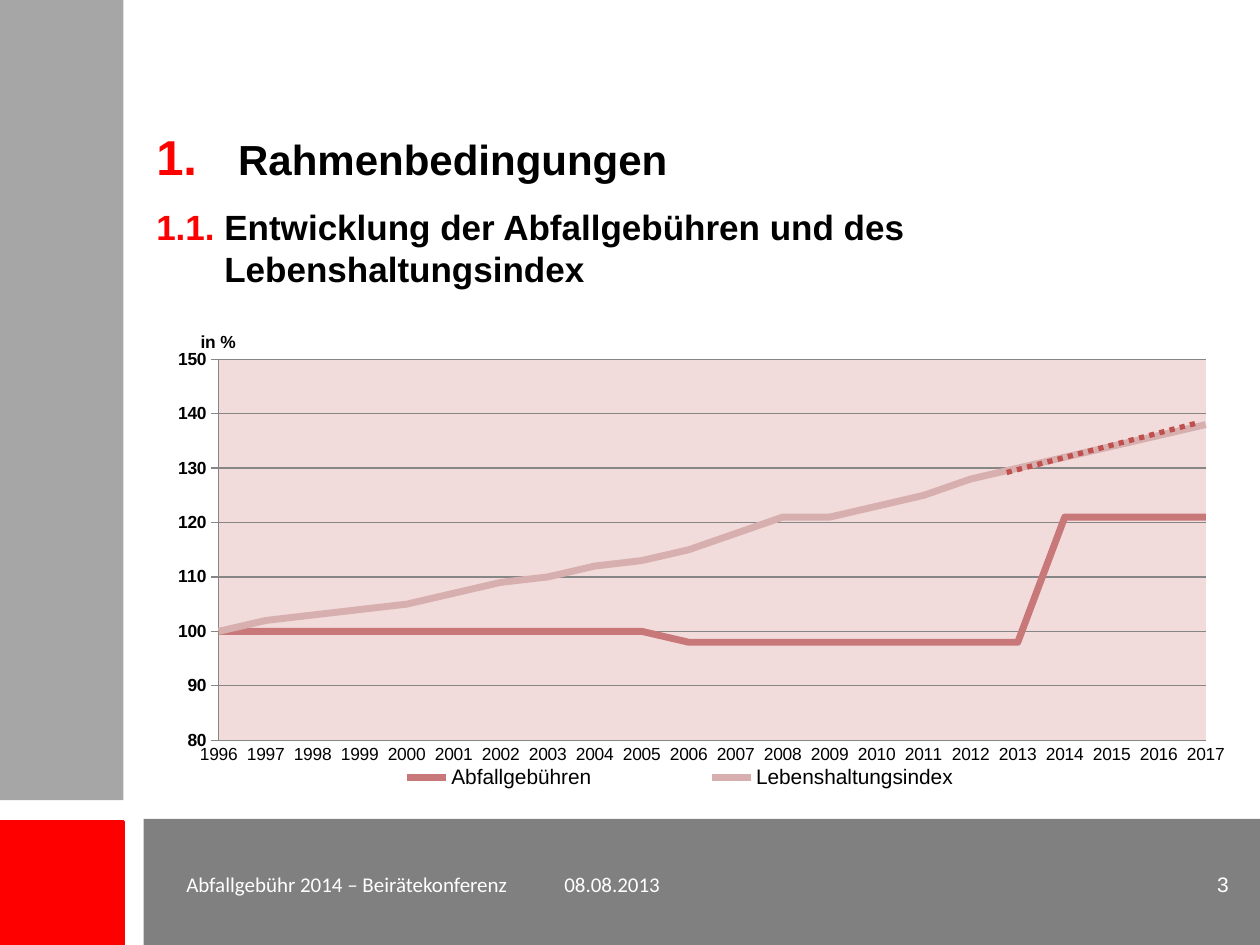
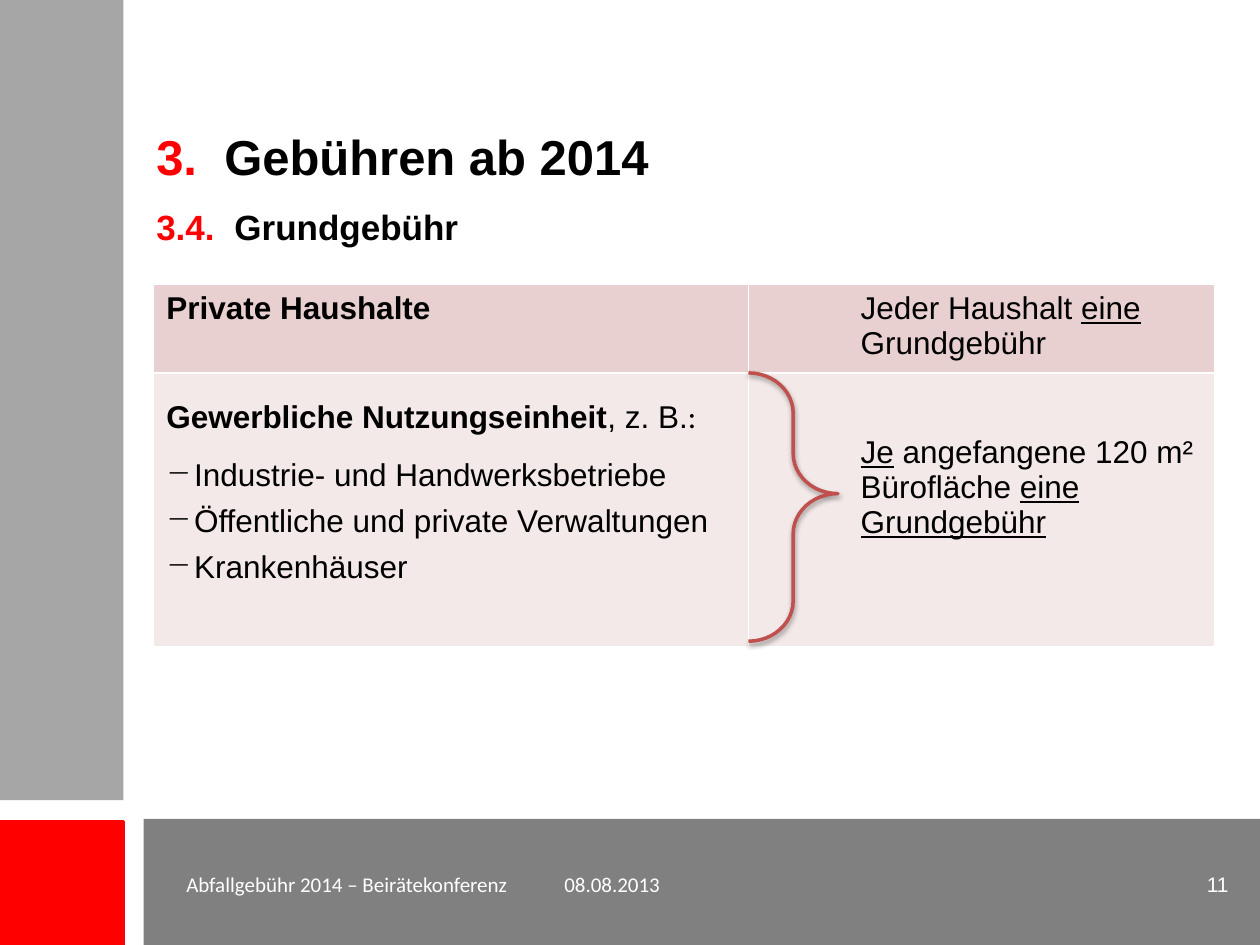
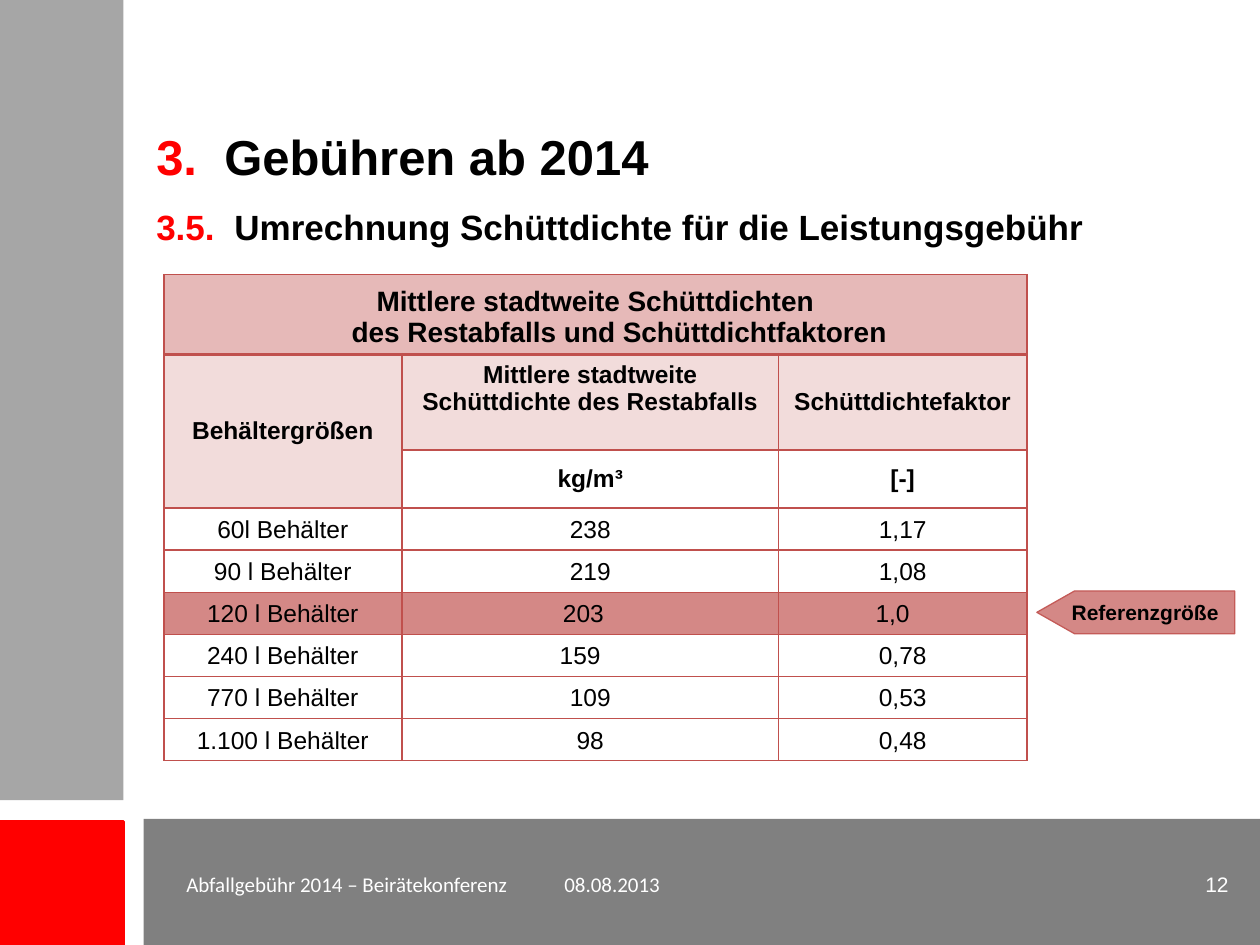
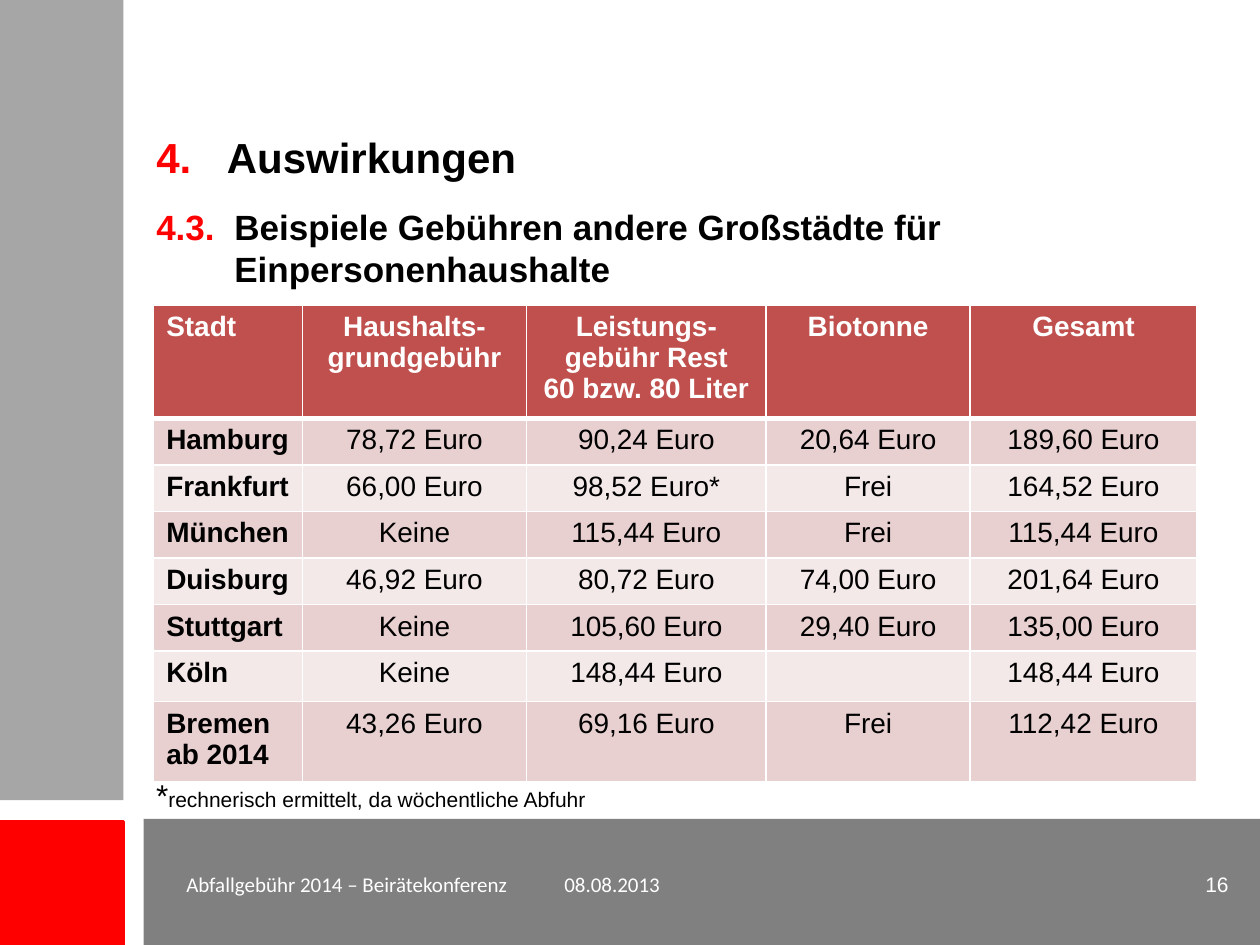
from dataclasses import dataclass
from typing import NamedTuple, Optional

from lxml import etree
from pptx import Presentation
from pptx.chart.data import CategoryChartData
from pptx.dml.color import RGBColor
from pptx.enum.chart import XL_CHART_TYPE, XL_LEGEND_POSITION, XL_MARKER_STYLE, XL_TICK_MARK
from pptx.enum.dml import MSO_LINE
from pptx.enum.shapes import MSO_CONNECTOR, MSO_SHAPE
from pptx.enum.text import MSO_ANCHOR, MSO_AUTO_SIZE, PP_ALIGN
from pptx.oxml.ns import qn
from pptx.util import Inches, Pt

LEFT, CENTER, RIGHT = PP_ALIGN.LEFT, PP_ALIGN.CENTER, PP_ALIGN.RIGHT
TOP, MIDDLE, BOTTOM = MSO_ANCHOR.TOP, MSO_ANCHOR.MIDDLE, MSO_ANCHOR.BOTTOM
RECTANGLE = MSO_SHAPE.RECTANGLE

BLACK, WHITE, RED = "000000", "FFFFFF", "FF0000"
FOOTER_GREY, SIDE_GREY, GRID_GREY = "808080", "A6A6A6", "868686"
ACCENT, ACCENT_EDGE, HIGHLIGHT = "C0504D", "C45B58", "D48886"
HEADING_PINK, PALE_PINK = "E6B9B8", "F2DCDB"
BAND_DARK, BAND_LIGHT = "E8D0D0", "F4E9E9"
FEE_LINE, INDEX_LINE = "C87878", "D8AFAF"


class Box(NamedTuple):
    left: float
    top: float
    width: float
    height: float

    def lengths(self) -> list:
        return [Inches(value) for value in self]


class Run(NamedTuple):
    text: str
    size: float = 18
    color: str = BLACK
    bold: bool = False
    underline: bool = False
    font: str = "Arial"


@dataclass
class Line:
    runs: list
    align: PP_ALIGN = LEFT
    indent: float = 0
    first: float = 0
    after: float = 0
    spacing: float = 1
    bullet: str = ""
    tab: float = 0


@dataclass
class Band:
    box: Box
    fill: str
    line: Optional[str] = None


@dataclass
class Heading:
    number: str
    lines: list
    box: Box
    indent: float
    number_size: float
    text_size: float


BANDS = [
    Band(Box(0, 6.52, 0.98, 0.98), RED, RED),
    Band(Box(1.14, 6.5, 8.86, 1), FOOTER_GREY),
    Band(Box(0, 0, 0.98, 6.35), SIDE_GREY),
]


def rgb(value: str) -> RGBColor:
    return RGBColor.from_string(value)


def add_element(parent, tag: str, **attributes):
    return etree.SubElement(parent, qn(tag), attributes)


def add_color(parent, color: str):
    return add_element(add_element(parent, "a:solidFill"), "a:srgbClr", val=color)


def write(text_frame, lines: list, anchor: MSO_ANCHOR = TOP) -> None:
    text_frame.word_wrap = True
    text_frame.vertical_anchor = anchor
    for position, line in enumerate(lines):
        paragraph = text_frame.paragraphs[0] if position == 0 else text_frame.add_paragraph()
        properties = paragraph._p.get_or_add_pPr()
        properties.set("marL", str(Inches(line.indent)))
        properties.set("indent", str(Inches(line.first)))
        if line.bullet:
            add_element(properties, "a:buChar", char=line.bullet)
        else:
            add_element(properties, "a:buNone")
        if line.tab:
            tabs = add_element(properties, "a:tabLst")
            add_element(tabs, "a:tab", pos=str(Inches(line.tab)), algn="l")
        paragraph.alignment = line.align
        paragraph.space_before = Pt(0)
        paragraph.space_after = Pt(line.after)
        paragraph.line_spacing = line.spacing
        for piece in line.runs:
            for part_number, part in enumerate(piece.text.split("\n")):
                if part_number:
                    paragraph.add_line_break()
                run = paragraph.add_run()
                run.text = part
                font = run.font
                font.name, font.size = piece.font, Pt(piece.size)
                font.bold, font.underline = piece.bold, piece.underline
                font.color.rgb = rgb(piece.color)


def add_text(slide, box: Box, lines: list, anchor: MSO_ANCHOR = TOP) -> None:
    write(slide.shapes.add_textbox(*box.lengths()).text_frame, lines, anchor)


def add_shape(slide, kind: MSO_SHAPE, box: Box, fill: Optional[str],
              line: Optional[str] = None, width: float = 2):
    shape = slide.shapes.add_shape(kind, *box.lengths())
    shape.shadow.inherit = False
    if fill:
        shape.fill.solid()
        shape.fill.fore_color.rgb = rgb(fill)
    else:
        shape.fill.background()
    if line:
        shape.line.color.rgb = rgb(line)
        shape.line.width = Pt(width)
    else:
        shape.line.fill.background()
    return shape


def move_bands_to_master(presentation, slide) -> None:
    tree = presentation.slide_master.shapes.element
    for position, band in enumerate(BANDS):
        shape = add_shape(slide, RECTANGLE, band.box, band.fill, band.line)
        tree.insert(2 + position, shape.element)


def fill_heading(placeholder, heading: Heading) -> None:
    box = heading.box.lengths()
    placeholder.left, placeholder.top, placeholder.width, placeholder.height = box
    placeholder.text_frame.auto_size = MSO_AUTO_SIZE.NONE
    lines = []
    for position, text in enumerate(heading.lines):
        runs = [Run(text, heading.text_size, BLACK, True)]
        if position == 0:
            runs.insert(0, Run(heading.number + "\t", heading.number_size, RED, True))
        first = 0 if position else -heading.indent
        lines.append(Line(runs, indent=heading.indent, first=first))
    write(placeholder.text_frame, lines)


def add_page(presentation, number: int, title: Heading, subtitle: Heading):
    slide = presentation.slides.add_slide(presentation.slide_layouts[1])
    fill_heading(slide.shapes.title, title)
    fill_heading(slide.placeholders[1], subtitle)
    footer = Run("Abfallgebühr 2014 – Beirätekonferenz\t08.08.2013", 12, WHITE, font="Calibri")
    add_text(slide, Box(1.38, 6.82, 6.22, 0.4), [Line([footer], tab=2.77)], MIDDLE)
    add_text(slide, Box(8.95, 6.82, 0.9, 0.4),
             [Line([Run(str(number), 12, WHITE)], RIGHT)], MIDDLE)
    return slide


def title_of(number: str, text: str, indent: float = 0.54, number_size: float = 28,
             text_size: float = 28, top: float = 0.95) -> Heading:
    return Heading(number, [text], Box(1.14, top, 8.51, 0.57), indent, number_size, text_size)


def subtitle_of(number: str, *lines: str, indent: float = 0.62) -> Heading:
    height = 0.44 if len(lines) == 1 else 0.77
    return Heading(number, list(lines), Box(1.14, 1.58, 8.86, height), indent, 20, 20)


def set_borders(cell, color: str, bottom: float = 1, top: float = 1) -> None:
    properties = cell._tc.get_or_add_tcPr()
    widths = {"a:lnL": 1, "a:lnR": 1, "a:lnT": top, "a:lnB": bottom}
    for position, (tag, width) in enumerate(widths.items()):
        border = etree.Element(qn(tag), w=str(Pt(width)))
        add_color(border, color)
        properties.insert(position, border)


def add_table(slide, box: Box, columns: list, rows: list, border: str, header_line: float = 1):
    frame = slide.shapes.add_table(len(rows), len(columns), *box.lengths())
    table = frame.table
    table.first_row = table.horz_banding = False
    for column, width in zip(table.columns, columns):
        column.width = Inches(width)
    for position, (row, height) in enumerate(zip(table.rows, rows)):
        row.height = Inches(height)
        for cell in row.cells:
            set_borders(cell, border, header_line if position == 0 else 1,
                        header_line if position == 1 else 1)
    return table


def fill_cell(cell, lines: list, fill: Optional[str] = None, anchor: MSO_ANCHOR = TOP) -> None:
    if fill:
        cell.fill.solid()
        cell.fill.fore_color.rgb = rgb(fill)
    else:
        cell.fill.background()
    write(cell.text_frame, lines)
    cell.vertical_anchor = anchor


def set_layout(parent, previous: Optional[str], **fractions: float) -> None:
    old = parent.find(qn("c:layout"))
    if old is not None:
        parent.remove(old)
    layout = etree.Element(qn("c:layout"))
    manual = add_element(layout, "c:manualLayout")
    if "w" in fractions and previous is None:
        add_element(manual, "c:layoutTarget", val="inner")
    for mode in ("xMode", "yMode"):
        add_element(manual, "c:" + mode, val="edge")
    for name, value in fractions.items():
        add_element(manual, "c:" + name, val=str(value))
    if previous:
        parent.find(qn(previous)).addnext(layout)
    else:
        parent.insert(0, layout)


def style_font(font, size: float, bold: bool = False) -> None:
    font.name, font.size, font.bold = "Arial", Pt(size), bold
    font.color.rgb = rgb(BLACK)


def add_index_chart(slide) -> None:
    data = CategoryChartData(number_format="General")
    data.categories = [str(year) for year in range(1996, 2018)]
    data.add_series("Abfallgebühren", [100] * 10 + [98] * 8 + [121] * 4)
    data.add_series("Lebenshaltungsindex", [
        100, 102, 103, 104, 105, 107, 109, 110, 112, 113, 115,
        118, 121, 121, 123, 125, 128, 130, 132, 134, 136, 138])
    box = Box(1.14, 2.18, 8.58, 4.2)
    chart = slide.shapes.add_chart(XL_CHART_TYPE.LINE, *box.lengths(), data).chart
    style_font(chart.font, 10)
    chart.has_title = False
    plot = chart.plots[0]
    plot.vary_by_categories = False
    for series, color in zip(plot.series, (FEE_LINE, INDEX_LINE)):
        series.smooth = False
        series.marker.style = XL_MARKER_STYLE.NONE
        series.format.line.color.rgb = rgb(color)
        series.format.line.width = Pt(4)

    years, percent = chart.category_axis, chart.value_axis
    style_font(years.tick_labels.font, 10)
    style_font(percent.tick_labels.font, 10, True)
    years.major_tick_mark = XL_TICK_MARK.NONE
    percent.major_tick_mark = XL_TICK_MARK.OUTSIDE
    percent.minimum_scale, percent.maximum_scale, percent.major_unit = 80, 150, 10
    percent.has_major_gridlines = True
    for line in (years.format.line, percent.format.line, percent.major_gridlines.format.line):
        line.color.rgb = rgb(GRID_GREY)
        line.width = Pt(0.75)
    crossing = percent._element.find(qn("c:crossBetween"))
    if crossing is None:
        crossing = etree.Element(qn("c:crossBetween"))
        percent._element.find(qn("c:crosses")).addnext(crossing)
    crossing.set("val", "midCat")

    title = percent.axis_title
    run = title.text_frame.paragraphs[0].add_run()
    run.text = "in %"
    style_font(run.font, 10, True)
    title_element = title._element
    body = title_element.find(".//" + qn("a:bodyPr"))
    body.set("rot", "0")
    body.set("vert", "horz")
    set_layout(title_element, "c:tx", x=0.05, y=0.1)

    chart.has_legend = True
    legend = chart.legend
    legend.position = XL_LEGEND_POSITION.BOTTOM
    legend.include_in_layout = False
    style_font(legend.font, 12)
    set_layout(legend._element, "c:legendPos", x=0.14, y=0.91, w=0.72, h=0.08)

    area = chart._chartSpace.find(".//" + qn("c:plotArea"))
    set_layout(area, None, x=0.07, y=0.16, w=0.92, h=0.72)
    add_color(add_element(area, "c:spPr"), PALE_PINK)


def build_index_slide(presentation) -> None:
    slide = add_page(
        presentation, 3, title_of("1.", "Rahmenbedingungen", 0.65, 28, 24),
        subtitle_of("1.1.", "Entwicklung der Abfallgebühren und des",
                    "Lebenshaltungsindex", indent=0.54))
    move_bands_to_master(presentation, slide)
    add_index_chart(slide)
    forecast = slide.shapes.add_connector(
        MSO_CONNECTOR.STRAIGHT, Inches(7.99), Inches(3.75), Inches(9.49), Inches(3.36))
    forecast.line.color.rgb = rgb(ACCENT)
    forecast.line.width = Pt(3)
    forecast.line.dash_style = MSO_LINE.ROUND_DOT
    add_element(forecast._element.spPr, "a:effectLst")


def build_base_fee_slide(presentation) -> None:
    slide = add_page(presentation, 11, title_of("3.", "Gebühren ab 2014"),
                     subtitle_of("3.4.", "Grundgebühr"))
    table = add_table(slide, Box(1.22, 2.26, 8.42, 2.87), [4.72, 3.7], [0.7, 2.17], WHITE)
    fill_cell(table.cell(0, 0), [Line([Run("Private Haushalte", bold=True)])], BAND_DARK)
    fill_cell(table.cell(0, 1), [Line([
        Run("Jeder Haushalt "), Run("eine", underline=True), Run(" Grundgebühr")],
        indent=0.79)], BAND_DARK)
    examples = ["Industrie- und Handwerksbetriebe", "Öffentliche und private Verwaltungen",
                "Krankenhäuser"]
    intro = Line([Run("Gewerbliche Nutzungseinheit", bold=True), Run(", z. B."),
                  Run(":", font="Calibri")], after=12, spacing=1.5)
    fill_cell(table.cell(1, 0), [intro] + [
        Line([Run(text)], indent=0.22, first=-0.22, after=6, bullet="−")
        for text in examples], BAND_LIGHT)
    office = table.cell(1, 1)
    fill_cell(office, [Line([
        Run("Je", underline=True), Run(" angefangene 120 m² Bürofläche "),
        Run("eine Grundgebühr", underline=True)], indent=0.79)], BAND_LIGHT)
    office.margin_top = Inches(0.49)
    office.margin_right = Inches(0.05)

    brace = add_shape(slide, MSO_SHAPE.RIGHT_BRACE, Box(5.94, 2.96, 0.71, 2.13), None, ACCENT)
    brace.adjustments[0] = brace.adjustments[1] = 0.45
    effects = brace._element.spPr.find(qn("a:effectLst"))
    shadow = add_element(effects, "a:outerShdw", blurRad=str(Pt(3.1)), dist=str(Pt(1.6)),
                         dir="5400000", rotWithShape="0")
    add_element(add_element(shadow, "a:srgbClr", val=BLACK), "a:alpha", val="38000")


def build_density_slide(presentation) -> None:
    slide = add_page(presentation, 12, title_of("3.", "Gebühren ab 2014"),
                     subtitle_of("3.5.", "Umrechnung Schüttdichte für die Leistungsgebühr"))
    containers = [
        ("60l Behälter", "238", "1,17"),
        ("90 l Behälter", "219", "1,08"),
        ("120 l Behälter", "203", "1,0"),
        ("240 l Behälter", "159", "0,78"),
        ("770 l Behälter", "109", "0,53"),
        ("1.100 l Behälter", "98", "0,48"),
    ]
    right_margins = {"203": 0.21, "159": 0.26, "1,0": 0.26}
    table = add_table(slide, Box(1.3, 2.18, 6.85, 3.73), [1.89, 2.99, 1.97],
                      [0.59, 0.76, 0.46] + [0.32] * len(containers), ACCENT, 2)
    table.cell(0, 0).merge(table.cell(0, 2))
    table.cell(1, 0).merge(table.cell(2, 0))
    heading = Run("Mittlere stadtweite Schüttdichten\ndes Restabfalls und Schüttdichtfaktoren",
                  16, bold=True)
    fill_cell(table.cell(0, 0), [Line([heading], CENTER, 0.38, -0.38)], HEADING_PINK, BOTTOM)
    labels = [
        (1, 0, "Behältergrößen", PALE_PINK, MIDDLE),
        (1, 1, "Mittlere stadtweite\nSchüttdichte des Restabfalls", PALE_PINK, TOP),
        (1, 2, "Schüttdichtefaktor", PALE_PINK, MIDDLE),
        (2, 1, "kg/m³", None, MIDDLE),
        (2, 2, "[-]", None, MIDDLE),
    ]
    for row, column, text, fill, anchor in labels:
        fill_cell(table.cell(row, column), [Line([Run(text, 14, bold=True)], CENTER)],
                  fill, anchor)
    for row, values in enumerate(containers, 3):
        fill = HIGHLIGHT if values[0].startswith("120") else None
        for column, text in enumerate(values):
            cell = table.cell(row, column)
            fill_cell(cell, [Line([Run(text, 14)], CENTER)], fill, BOTTOM)
            cell.margin_right = Inches(right_margins.get(text, 0.1))

    reference = add_shape(slide, MSO_SHAPE.PENTAGON, Box(8.23, 4.69, 1.57, 0.34),
                          HIGHLIGHT, ACCENT_EDGE, 0.75)
    reference.adjustments[0] = 0.88
    reference._element.spPr.get_or_add_xfrm().set("flipH", "1")
    write(reference.text_frame, [Line([Run("Referenzgröße", 12, bold=True)], CENTER)], MIDDLE)


def build_cities_slide(presentation) -> None:
    slide = add_page(
        presentation, 16, title_of("4.", "Auswirkungen", 0.56, 24, 24, 0.99),
        subtitle_of("4.3.", "Beispiele Gebühren andere Großstädte für",
                    "Einpersonenhaushalte"))
    rows = [
        ("Stadt", "Haushalts-grundgebühr", "Leistungs-gebühr Rest\n60 bzw. 80 Liter",
         "Biotonne", "Gesamt"),
        ("Hamburg", "78,72 Euro", "90,24 Euro", "20,64 Euro", "189,60 Euro"),
        ("Frankfurt", "66,00 Euro", "98,52 Euro*", "Frei", "164,52 Euro"),
        ("München", "Keine", "115,44 Euro", "Frei", "115,44 Euro"),
        ("Duisburg", "46,92 Euro", "80,72 Euro", "74,00 Euro", "201,64 Euro"),
        ("Stuttgart", "Keine", "105,60 Euro", "29,40 Euro", "135,00 Euro"),
        ("Köln", "Keine", "148,44 Euro", "", "148,44 Euro"),
        ("Bremen\nab 2014", "43,26 Euro", "69,16 Euro", "Frei", "112,42 Euro"),
    ]
    table = add_table(slide, Box(1.22, 2.42, 8.28, 3.73), [1.18, 1.78, 1.9, 1.62, 1.8],
                      [0.89] + [0.37] * 6 + [0.62], WHITE, 3)
    for row, values in enumerate(rows):
        header = row == 0
        fill = ACCENT if header else (BAND_LIGHT, BAND_DARK)[row % 2]
        for column, text in enumerate(values):
            run = Run(text, 16, WHITE if header else BLACK, header or column == 0)
            runs = [run] if text else []
            fill_cell(table.cell(row, column), [Line(runs, CENTER if column else LEFT)], fill)
    add_text(slide, Box(1.14, 6.11, 4.25, 0.4), [Line([
        Run("*"), Run("rechnerisch ermittelt, da wöchentliche Abfuhr", 12)])])


def main() -> None:
    presentation = Presentation()
    presentation.slide_width, presentation.slide_height = Inches(10), Inches(7.5)
    build_index_slide(presentation)
    build_base_fee_slide(presentation)
    build_density_slide(presentation)
    build_cities_slide(presentation)
    presentation.save("out.pptx")


if __name__ == "__main__":
    main()
